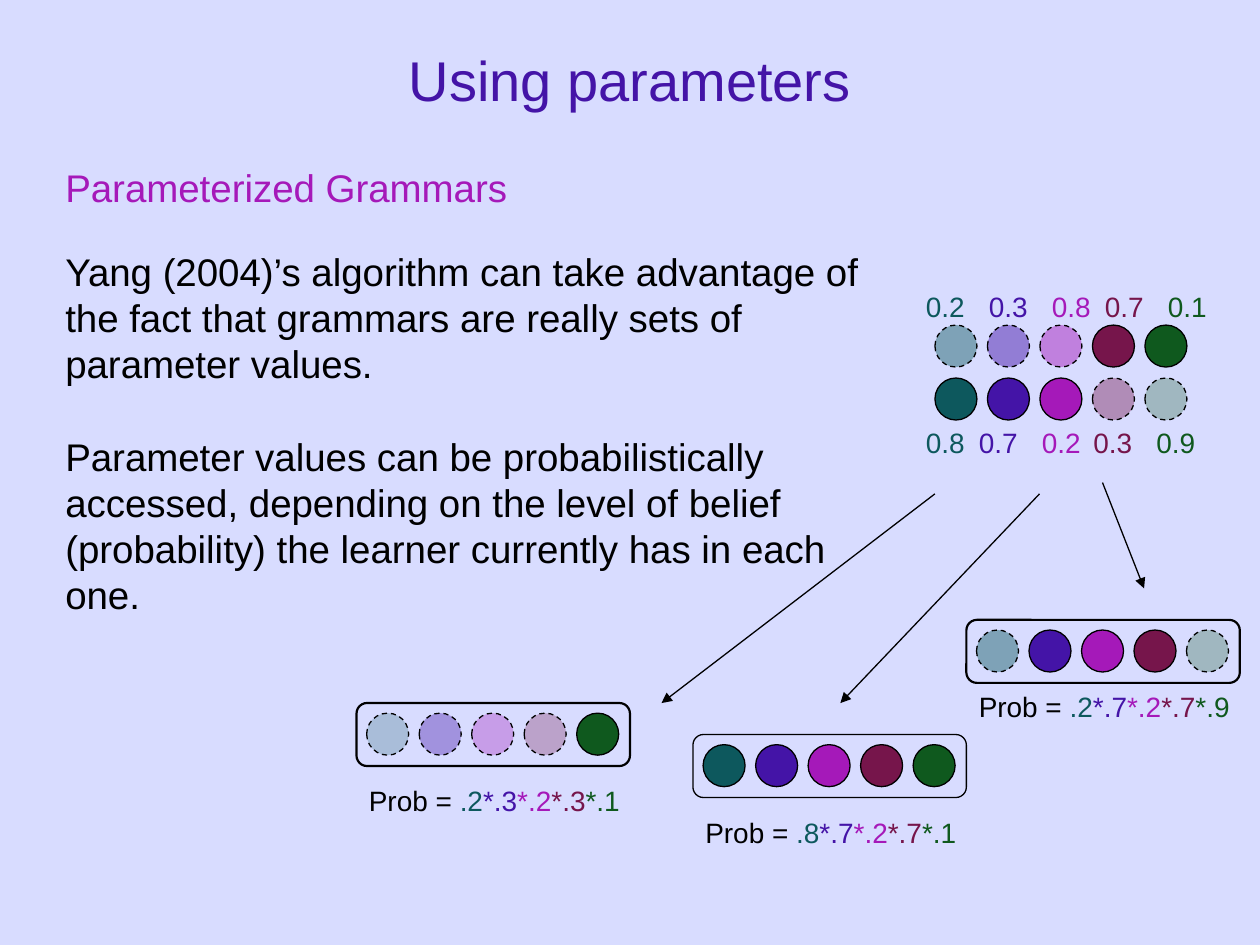
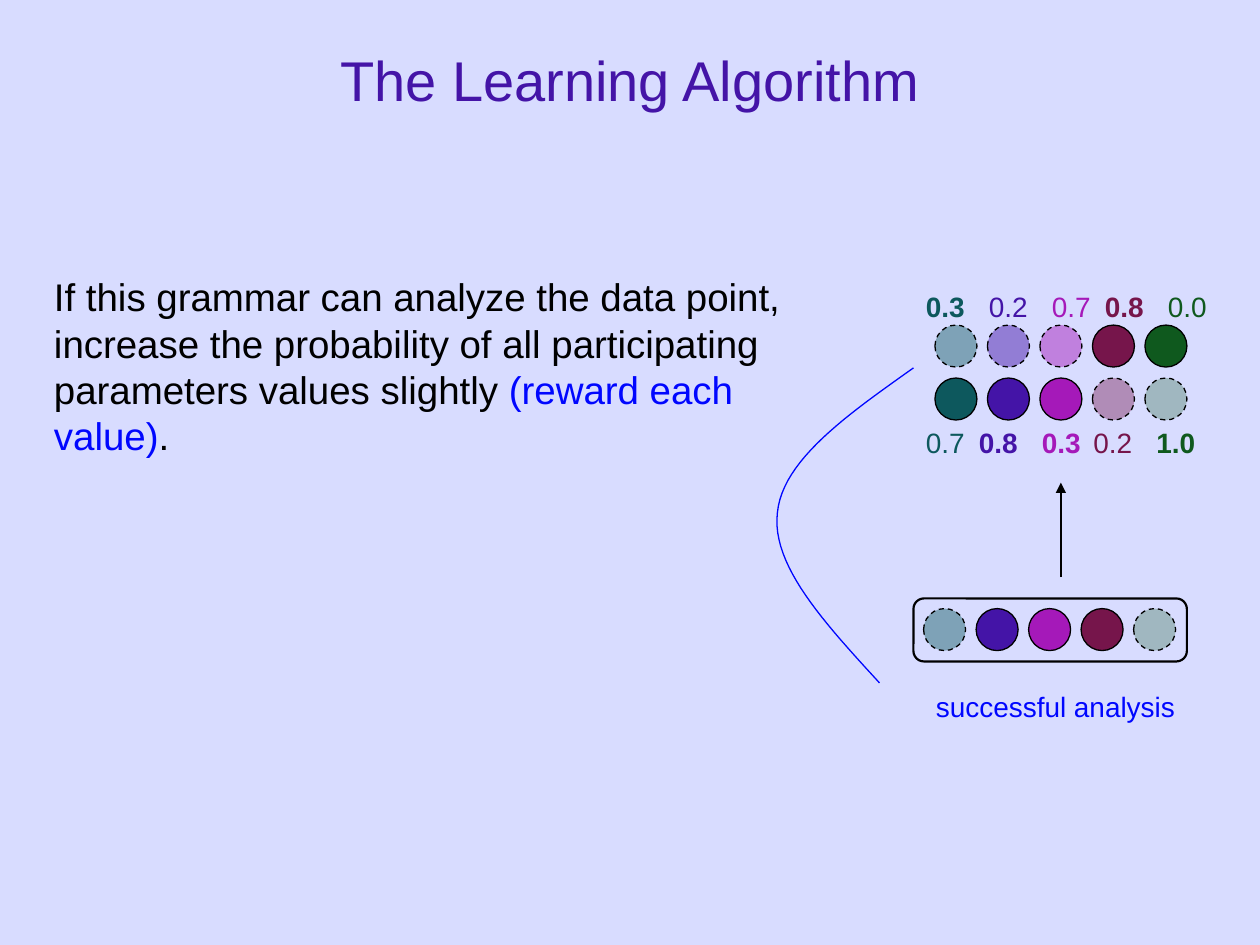
from lxml import etree
from pptx import Presentation
from pptx import util as u
from pptx.dml.color import RGBColor
from pptx.enum import dml, shapes, text
from pptx.oxml import ns

BACK = RGBColor(0xD8, 0xDC, 0xFF)
BLACK = RGBColor(0, 0, 0)
BLUE = RGBColor(0x00, 0x06, 0xFF)
TEAL = RGBColor(0x0D, 0x58, 0x5D)
INDIGO = RGBColor(0x44, 0x14, 0xA7)
PURPLE = RGBColor(0xA5, 0x19, 0xB9)
WINE = RGBColor(0x76, 0x15, 0x4B)
GREEN = RGBColor(0x0F, 0x59, 0x1E)
HUES = [TEAL, INDIGO, PURPLE, WINE, GREEN]

DOT, STEP = 1 / 3, 5 / 12
# Opacity of each dot in percent; 100 is a chosen value, less is a faded one.
TOP = [44, 47, 47, 100, 100]
LOW = [100, 100, 100, 40, 28]
MIXED = [44, 100, 100, 100, 28]
FAINT = [23, 37, 32, 29, 100]
FULL = [100] * 5

TITLE = dict(size=u.Pt(32))
BODY = dict(size=u.Pt(22))
SMALL = dict(size=u.Pt(16))
BOLD = dict(size=u.Pt(16), bold=True)


def write(slide, box, paras, form, wrap=True):
    """Add a text box; each paragraph is a list of (words, colour) runs."""
    shape = slide.shapes.add_textbox(*map(u.Inches, box))
    frame = shape.text_frame
    frame.word_wrap = wrap
    for i, runs in enumerate(paras):
        para = frame.paragraphs[0] if i == 0 else frame.add_paragraph()
        para.line_spacing = u.Pt(form["size"].pt * 1.2)
        if i:
            para.space_before = para.line_spacing
        for words, hue in runs:
            run = para.add_run()
            run.text = words
            run.font.name = "Arial"
            run.font.color.rgb = hue
            for key, val in form.items():
                setattr(run.font, key, val)
    return frame


def dots(slide, left, top, row):
    """Add five parameter dots, dashed and see-through where faded."""
    for i, (hue, alpha) in enumerate(zip(HUES, row)):
        dot = slide.shapes.add_shape(
            shapes.MSO_SHAPE.OVAL, u.Inches(left + i * STEP), u.Inches(top),
            u.Inches(DOT), u.Inches(DOT))
        dot.shadow.inherit = False
        dot.fill.solid()
        dot.fill.fore_color.rgb = hue
        dot.line.color.rgb = BLACK
        dot.line.width = u.Pt(0.75)
        if alpha < 100:
            dot.line.dash_style = dml.MSO_LINE.DASH
            clr = dot._element.spPr.find(ns.qn("a:solidFill"))[0]
            etree.SubElement(clr, ns.qn("a:alpha"), val=str(alpha * 1000))


# Each card: left, top, opacities, outline width.
# Each arrow: start x, start y, end x, end y.
PAGES = [
    dict(title="Using parameters",
         odds=["0.2 0.3 0.8 0.7 0.1", "0.8 0.7 0.2 0.3 0.9"],
         bold=["", ""],
         cards=[(2.83, 5.58, FAINT, 1.25), (5.5, 5.83, FULL, 0.75),
                (7.67, 4.92, MIXED, 1.25)],
         arrows=[(7.42, 3.92, 5.25, 5.58), (8.25, 3.92, 6.67, 5.58),
                 (8.75, 3.83, 9.08, 4.67)]),
    dict(title="The Learning Algorithm",
         odds=["0.3 0.2 0.7 0.8 0.0", "0.7 0.8 0.3 0.2 1.0"],
         bold=["0.3 0.8", "0.8 0.3 1.0"],
         cards=[(7.25, 4.75, MIXED, 1.25)],
         arrows=[(8.42, 4.58, 8.42, 3.83)]),
]
# Label top, label lefts, dot top and opacities for both rows of the grid.
ROWS = [(2.25, [7.25, 7.75, 8.25, 8.67, 9.17], 2.58, TOP),
        (3.33, [7.25, 7.67, 8.17, 8.58, 9.08], 3, LOW)]

prs = Presentation()
prs.slide_width, prs.slide_height = u.Inches(10), u.Inches(7.5)
slides = []
for page in PAGES:
    slide = prs.slides.add_slide(prs.slide_layouts[6])
    slides.append(slide)
    slide.background.fill.solid()
    slide.background.fill.fore_color.rgb = BACK

    head = write(slide, (0, 0, 10, 1.25), [[(page["title"], INDIGO)]], TITLE)
    head.vertical_anchor = text.MSO_ANCHOR.MIDDLE
    head.paragraphs[0].alignment = text.PP_ALIGN.CENTER

    for (high, lefts, top, row), odds, bold in zip(
            ROWS, page["odds"], page["bold"]):
        dots(slide, 7.42, top, row)
        for left, odd, hue in zip(lefts, odds.split(), HUES):
            form = BOLD if odd in bold.split() else SMALL
            write(slide, (left, high, 0.51, 0.37), [[(odd, hue)]], form, False)

    for ends in page["arrows"]:
        arrow = slide.shapes.add_connector(
            shapes.MSO_CONNECTOR.STRAIGHT, *map(u.Inches, ends))
        arrow.line.color.rgb = BLACK
        arrow.line.width = u.Pt(0.75)
        etree.SubElement(arrow.line._get_or_add_ln(), ns.qn("a:tailEnd"),
                         type="triangle")
        etree.SubElement(arrow._element.spPr, ns.qn("a:effectLst"))

    for left, top, row, width in page["cards"]:
        dots(slide, left + 0.08, top + 0.08, row)
        card = slide.shapes.add_shape(
            shapes.MSO_SHAPE.ROUNDED_RECTANGLE,
            *map(u.Inches, (left, top, 2.17, 0.5)))
        card.shadow.inherit = False
        card.fill.background()
        card.line.color.rgb = BLACK
        card.line.width = u.Pt(width)

using, learn = slides

# Using parameters: the prose and the probability under each card
write(using, (0.42, 1.25, 4.37, 0.47),
      [[("Parameterized Grammars", PURPLE)]], BODY)
write(using, (0.42, 1.92, 6.83, 3.06), [
    [("Yang (2004)’s algorithm can take advantage of the fact that grammars "
      "are really sets of parameter values.", BLACK)],
    [("Parameter values can be probabilistically accessed, depending on the "
      "level of belief (probability) the learner currently has in each one.",
      BLACK)]], BODY)
for left, top, probs in [(2.83, 6.17, ".2 *.3 *.2 *.3 *.1"),
                         (5.5, 6.42, ".8 *.7 *.2 *.7 *.1"),
                         (7.67, 5.42, ".2 *.7 *.2 *.7 *.9")]:
    runs = [("Prob = ", BLACK), *zip(probs.split(), HUES)]
    write(using, (left, top, 2.2, 0.37), [runs], SMALL, False)

# The Learning Algorithm: the reward rule and the curve back to the grid
write(learn, (0.33, 2.12, 6.08, 2.69), [
    [("If this grammar can analyze the data point, increase the probability "
      "of all participating parameters values slightly ", BLACK),
     ("(reward each value)", BLUE), (".", BLACK)]], BODY)
write(learn, (7.33, 5.42, 2.1, 0.37), [[("successful analysis", BLUE)]],
      SMALL, False)

BENDS = [[(6.98, 5.42), (6.55, 4.95), (6.12, 4.49), (6.17, 4.07)],
         [(6.17, 4.07), (6.21, 3.65), (6.73, 3.29), (7.25, 2.92)]]
points = []
for bend in BENDS:
    for t in [n / 24 for n in range(25)]:
        parts = [(1 - t) ** 3, 3 * t * (1 - t) ** 2, 3 * t * t * (1 - t), t ** 3]
        points.append([u.Inches(sum(p * c for p, c in zip(parts, axis)))
                       for axis in zip(*bend)])
path = learn.shapes.build_freeform(*points[0])
path.add_line_segments(points[1:], close=False)
curve = path.convert_to_shape()
curve.shadow.inherit = False
curve.fill.background()
curve.line.color.rgb = BLUE
curve.line.width = u.Pt(0.75)

prs.save("out.pptx")
